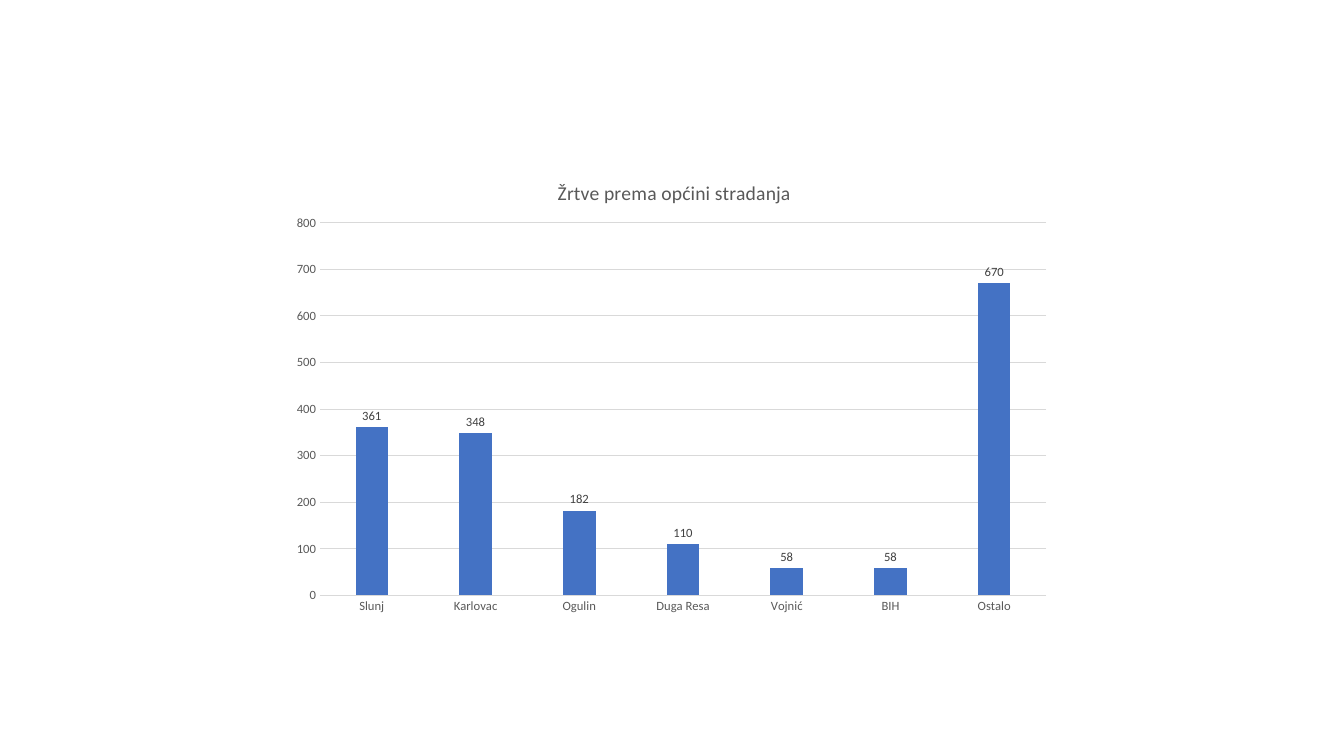
from dataclasses import dataclass

from lxml.etree import SubElement
from pptx import Presentation
from pptx.chart.data import CategoryChartData
from pptx.dml.color import RGBColor
from pptx.enum.chart import XL_CHART_TYPE, XL_LABEL_POSITION, XL_TICK_MARK
from pptx.oxml import parse_xml
from pptx.oxml.ns import nsdecls, qn
from pptx.util import Inches, Pt


@dataclass(frozen=True)
class Theme:
    font: str = "Calibri"
    bar: str = "4472C4"
    line: str = "D9D9D9"
    text: str = "595959"
    label: str = "404040"
    title_size: float = 14
    text_size: float = 9
    line_width: float = 0.75


THEME = Theme()
TITLE = "Žrtve prema općini stradanja"
VICTIMS = {
    "Slunj": 361,
    "Karlovac": 348,
    "Ogulin": 182,
    "Duga Resa": 110,
    "Vojnić": 58,
    "BIH": 58,
    "Ostalo": 670,
}
CHART_AREA = (0.209, 0.205, 0.581, 0.62)  # shares of the slide
PLOT_AREA = {"x": 0.05, "y": 0.145, "w": 0.93, "h": 0.795}  # shares of the chart
TITLE_PLACE = {"x": 0.35, "y": 0.045}


def set_attributes(target, values):
    for name, value in values.items():
        setattr(target, name, value)


def format_font(font, size, color):
    set_attributes(font, {"name": THEME.font, "size": Pt(size), "bold": False})
    font.color.rgb = RGBColor.from_string(color)


def format_line(line):
    line.width = Pt(THEME.line_width)
    line.color.rgb = RGBColor.from_string(THEME.line)


def set_layout(element, index, place, inner=False):
    """Fix the place of a chart part in shares of the chart's size."""
    for existing in element.findall(qn("c:layout")):
        element.remove(existing)
    layout = parse_xml(f"<c:layout {nsdecls('c')}><c:manualLayout/></c:layout>")
    manual = layout[0]
    if inner:
        SubElement(manual, qn("c:layoutTarget"), val="inner")
    for key in "xy":
        SubElement(manual, qn(f"c:{key}Mode"), val="edge")
    for key, share in place.items():
        SubElement(manual, qn(f"c:{key}"), val=str(share))
    element.insert(index, layout)


def format_title(chart):
    frame = chart.chart_title.text_frame
    frame.text = TITLE
    format_font(frame.paragraphs[0].runs[0].font, THEME.title_size, THEME.text)
    chart.chart_title.include_in_layout = False
    set_layout(chart.chart_title._element, 1, TITLE_PLACE)


def format_axes(chart):
    category_axis, value_axis = chart.category_axis, chart.value_axis
    for axis in (category_axis, value_axis):
        set_attributes(axis, {"major_tick_mark": XL_TICK_MARK.NONE,
                              "minor_tick_mark": XL_TICK_MARK.NONE})
        format_font(axis.tick_labels.font, THEME.text_size, THEME.text)
    format_line(category_axis.format.line)
    value_axis.format.line.fill.background()
    set_attributes(value_axis, {"minimum_scale": 0, "maximum_scale": 800,
                                "major_unit": 100, "has_major_gridlines": True})
    format_line(value_axis.major_gridlines.format.line)


def format_bars(plot):
    set_attributes(plot, {"gap_width": 219, "overlap": -27,
                          "vary_by_categories": False})
    series = plot.series[0]
    series.format.fill.solid()
    series.format.fill.fore_color.rgb = RGBColor.from_string(THEME.bar)
    labels = series.data_labels
    set_attributes(labels, {"show_value": True,
                            "position": XL_LABEL_POSITION.OUTSIDE_END})
    format_font(labels.font, THEME.text_size, THEME.label)


def add_victims_chart(slide, area):
    data = CategoryChartData()
    data.categories = list(VICTIMS)
    data.add_series("Series 1", list(VICTIMS.values()))
    chart = slide.shapes.add_chart(XL_CHART_TYPE.COLUMN_CLUSTERED, *area, data).chart
    chart.has_legend = False
    format_font(chart.font, THEME.text_size, THEME.text)
    format_title(chart)
    format_axes(chart)
    format_bars(chart.plots[0])
    set_layout(chart._chartSpace.chart.plotArea, 0, PLOT_AREA, inner=True)


def main():
    presentation = Presentation()
    set_attributes(presentation, {"slide_width": Inches(13.33),
                                  "slide_height": Inches(7.5)})
    size = (presentation.slide_width, presentation.slide_height) * 2
    slide = presentation.slides.add_slide(presentation.slide_layouts[6])
    area = [int(share * length) for share, length in zip(CHART_AREA, size)]
    add_victims_chart(slide, area)
    presentation.save("out.pptx")


if __name__ == "__main__":
    main()
